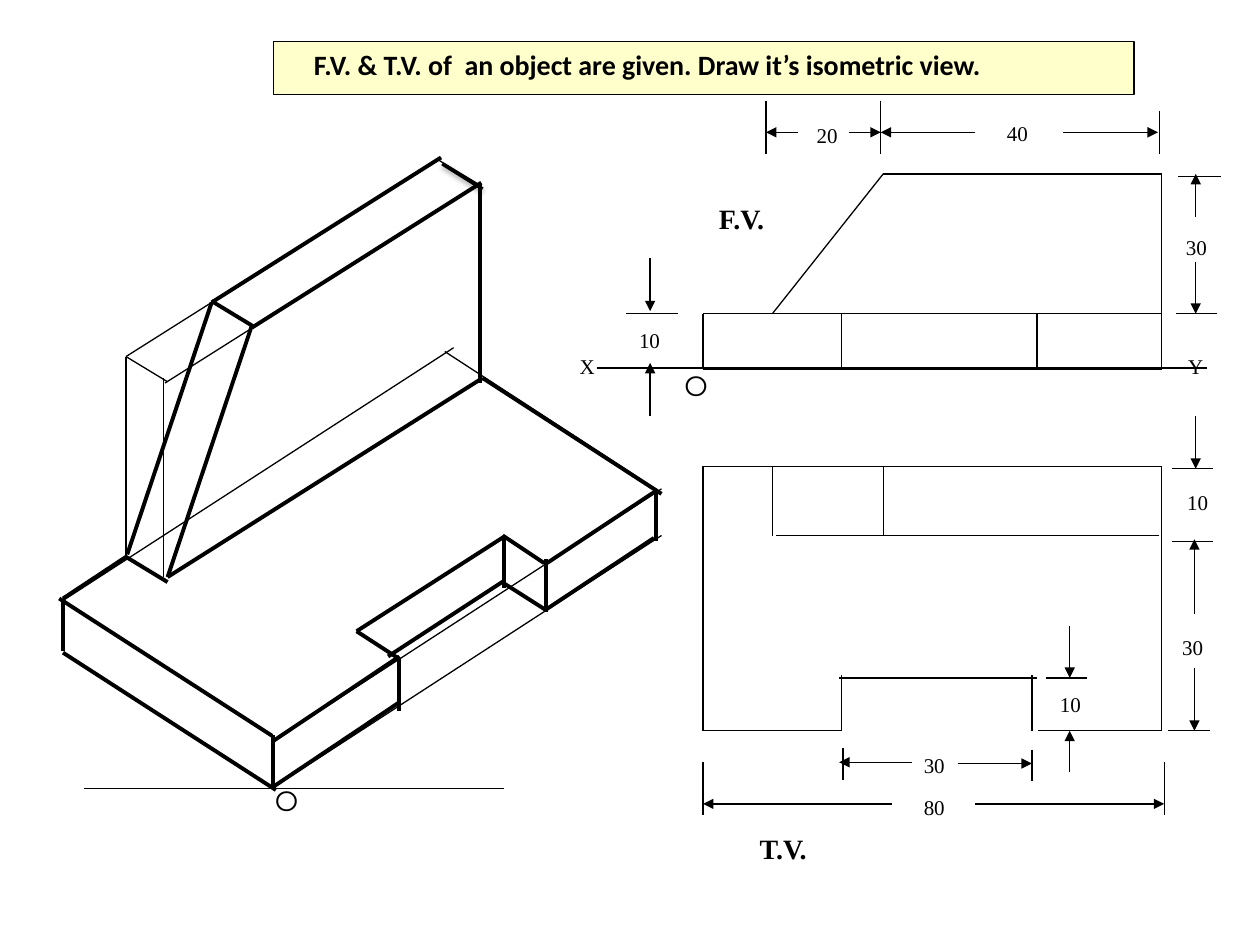
from itertools import pairwise
from lxml import etree
from pptx import Presentation
from pptx import util as u
from pptx.dml.color import RGBColor
from pptx.enum import shapes, text
from pptx.oxml import parse_xml
from pptx.oxml.ns import qn

TITLE = "F.V. & T.V. of  an object are given. Draw it’s isometric view."
SERIF, SANS = "Times New Roman", "Montserrat"

THIN_ISO = [
    [(0.67, 6.26), (4, 6.26)],
    [(2.17, 6.25), (5.25, 4.25)],
    [(2.17, 5.88), (5.25, 3.88)],
    [(0.51, 4.76), (3.6, 2.76)],
    [(5.22, 3.89), (3.53, 2.79)],
    [(1, 4.42), (1, 2.83), (3.5, 1.25)],
    [(1.3, 4.58), (1.3, 3)],
    [(1.31, 3.04), (3.81, 1.46)],
    [(3.48, 1.27), (3.81, 1.47)],
    [(1, 2.83), (1.33, 3.03)],
]
BOLD_ISO = [
    [(2.19, 6.27), (0.5, 5.18)],
    [(2.17, 6.25), (2.17, 5.83)],
    [(0.5, 5.17), (0.5, 4.75), (1, 4.42), (1.33, 4.62)],
    [(5.21, 4.29), (5.21, 3.88)],
    [(2.16, 5.84), (0.47, 4.75)],
    [(3.17, 5.22), (3.17, 5.64)],
    [(4.33, 4.44), (4.33, 4.86)],
    [(3.17, 5.23), (2.83, 5.01), (4, 4.26), (4, 4.67)],
    [(4.32, 4.47), (3.99, 4.25)],
    [(4.33, 4.84), (4, 4.63)],
    [(3.08, 5.21), (4, 4.61)],
    [(2, 2.58), (1.33, 4.58), (3.83, 3), (5.25, 3.92)],
    [(3.81, 3.04), (3.81, 1.46)],
    [(1.68, 2.39), (2.01, 2.59)],
    [(1.01, 4.4), (1.68, 2.4), (3.5, 1.25)],
    [(2.17, 5.88), (3.17, 5.21)],
    [(4.34, 4.47), (5.2, 3.9)],
    [(2.16, 6.25), (3.16, 5.58)],
    [(4.33, 4.84), (5.19, 4.27)],
    [(2, 2.6), (3.82, 1.45)],
]
FRONT = [
    [(5.58, 2.49), (9.22, 2.49), (9.22, 2.93), (5.58, 2.93), (5.58, 2.49)],
    [(6.13, 2.49), (7.01, 1.38), (9.22, 1.38), (9.22, 2.49)],
    [(6.68, 2.49), (6.68, 2.93)],
    [(8.23, 2.49), (8.23, 2.93)],
    [(4.74, 2.92), (9.58, 2.92)],
]
TOP = [
    [(6.68, 5.8), (5.58, 5.8), (5.58, 3.7), (9.22, 3.7), (9.22, 5.8), (8.24, 5.8)],
    [(7.01, 3.7), (7.01, 4.25)],
    [(6.13, 3.7), (6.13, 4.25)],
    [(6.16, 4.25), (9.2, 4.25)],
    [(6.68, 5.36), (6.68, 5.8)],
    [(8.19, 5.36), (8.19, 5.8)],
    [(6.66, 5.38), (8.23, 5.38)],
]
UPRIGHT = [(5.58, 6.05, 6.47), (9.24, 6.05, 6.47), (6.69, 5.94, 6.19),
           (8.19, 5.95, 6.2), (6.08, 0.8, 1.22), (6.99, 0.8, 1.22),
           (9.2, 0.88, 1.22)]
LEVEL = [(5.38, 8.3, 8.63), (4.3, 9.3, 9.63), (3.72, 9.3, 9.63),
         (5.8, 9.27, 9.6), (1.4, 9.35, 9.69), (2.49, 9.33, 9.66),
         (2.49, 4.97, 5.38)]
ACROSS = [(6.05, 7.24, 6.66), (6.06, 7.6, 8.19), (6.38, 7.74, 9.24),
          (6.38, 7.08, 5.58), (1.05, 7.74, 6.99), (1.05, 8.44, 9.19),
          (1.05, 6.74, 6.99), (1.05, 6.33, 6.08)]
DOWN = [(9.49, 3.3, 3.72), (9.48, 4.87, 4.28), (9.48, 5.3, 5.8),
        (8.49, 4.97, 5.38), (8.49, 6.13, 5.8), (5.16, 3.3, 2.88),
        (5.16, 2.05, 2.47), (9.49, 1.72, 1.38), (9.49, 2.08, 2.49)]
SIZES = [("10", 4.97, 2.55), ("10", 9.32, 3.84), ("30", 9.28, 4.99),
         ("10", 8.31, 5.44), ("30", 9.31, 1.81), ("40", 7.89, 0.91),
         ("20", 6.38, 0.92), ("80", 7.23, 6.26), ("30", 7.23, 5.92)]
AXES = [("X", 4.5, 2.76), ("Y", 9.33, 2.76)]
NAMES = [("F.V.", 5.58, 1.55), ("T.V.", 5.91, 6.55)]
ORIGINS = [("O", 2.08, 6.17), ("O", 5.33, 2.88)]

SHADE = ('<a:effectLst xmlns:a="http://schemas.openxmlformats.org/drawingml/2006/main">'
         '<a:outerShdw blurRad="39370" dist="20320" dir="5400000" rotWithShape="0">'
         '<a:srgbClr val="000000"><a:alpha val="38000"/></a:srgbClr>'
         '</a:outerShdw></a:effectLst>')

deck = Presentation()
deck.slide_width, deck.slide_height = u.Inches(10), u.Inches(7.5)
slide = deck.slides.add_slide(deck.slide_layouts[5])


def color(code):
    return RGBColor.from_string(code)


def style(font, name, size, bold=False):
    font.name, font.size, font.bold = name, u.Pt(size), bold
    font.color.rgb = color("000000")


def line(start, end, width=0.75, arrow=False, shade=False):
    edge = slide.shapes.add_connector(
        shapes.MSO_CONNECTOR.STRAIGHT, *map(u.Inches, (*start, *end)))
    edge.line.color.rgb = color("000000")
    edge.line.width = u.Pt(width)
    props = edge._element.spPr
    if arrow:
        etree.SubElement(props.find(qn("a:ln")), qn("a:tailEnd"), type="triangle")
    if shade:
        props.append(parse_xml(SHADE))
    else:
        etree.SubElement(props, qn("a:effectLst"))


def chains(paths, width=0.75):
    for path in paths:
        for start, end in pairwise(path):
            line(start, end, width)


def labels(items, wide, high, name, size, bold=False):
    for words, left, top in items:
        box = slide.shapes.add_textbox(*map(u.Inches, (left, top, wide, high)))
        frame = box.text_frame
        frame.word_wrap = False
        para = frame.paragraphs[0]
        para.alignment = text.PP_ALIGN.CENTER
        run = para.add_run()
        run.text = words
        style(run.font, name, size, bold)


def heading():
    head = slide.shapes.title
    head.left, head.top, head.width, head.height = map(
        u.Inches, (2.17, 0.33, 6.83, 0.42))
    head.fill.solid()
    head.fill.fore_color.rgb = color("FFFFCC")
    head.line.color.rgb = color("000000")
    head.line.width = u.Pt(0.75)
    frame = head.text_frame
    frame.auto_size = text.MSO_AUTO_SIZE.NONE
    frame.word_wrap = False
    frame.vertical_anchor = text.MSO_ANCHOR.TOP
    frame.margin_left, frame.margin_top = u.Inches(0.32), u.Inches(0.05)
    para = frame.paragraphs[0]
    para.alignment = text.PP_ALIGN.LEFT
    run = para.add_run()
    run.text = TITLE
    style(run.font, "Calibri", 16, True)


heading()
chains(THIN_ISO)
chains(BOLD_ISO, 2.25)
chains(FRONT + TOP)
for marks, arrow in ((UPRIGHT, False), (DOWN, True)):
    for x, start, end in marks:
        line((x, start), (x, end), arrow=arrow)
for marks, arrow in ((LEVEL, False), (ACROSS, True)):
    for y, start, end in marks:
        line((start, y), (end, y), arrow=arrow)
labels(SIZES, 0.37, 0.3, SERIF, 12)
labels(AXES, 0.32, 0.3, SERIF, 12)
labels(NAMES, 0.61, 0.37, SERIF, 16, True)
labels(ORIGINS, 0.39, 0.37, SANS, 16)
line((3.83, 1.5), (3.51, 1.3), 2, shade=True)
deck.save("out.pptx")
